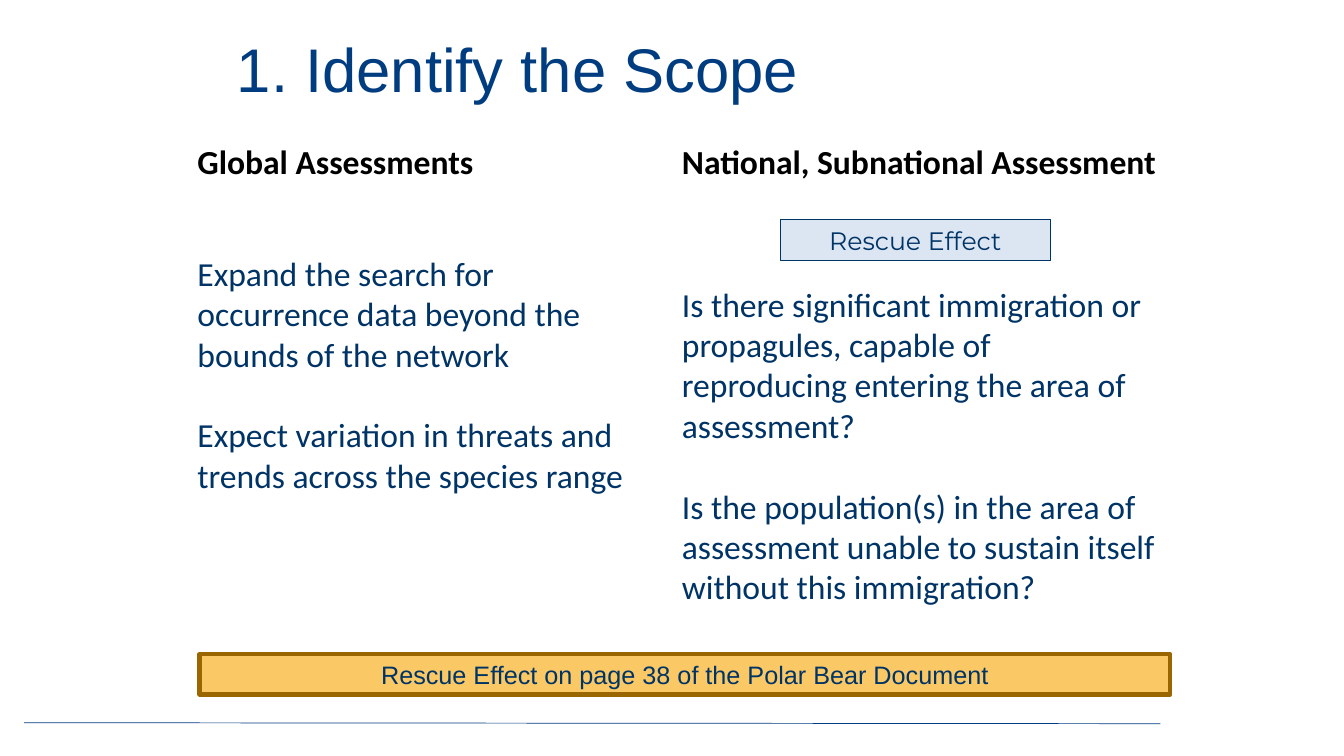
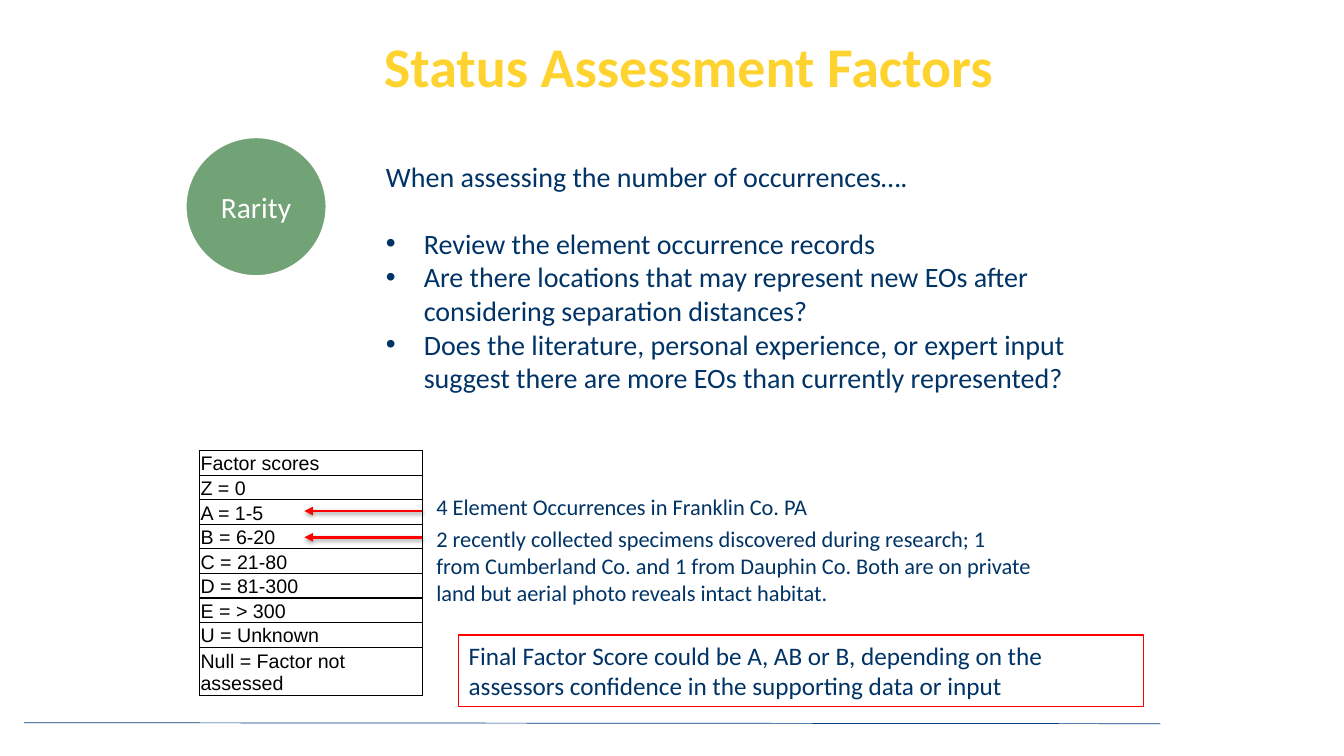
import lxml.etree
import pptx
import pptx.dml.color
import pptx.enum.shapes
import pptx.enum.text
import pptx.oxml.ns
import pptx.util

ALIGN = pptx.enum.text.PP_ALIGN
ANCHOR = pptx.enum.text.MSO_ANCHOR
SHAPE = pptx.enum.shapes.MSO_SHAPE

BLACK = "000000"
WHITE = "FFFFFF"
NAVY = "003366"
BLUE = "003D80"
RED = "FF0000"
YELLOW = "FFD32F"
GREEN = "72A376"
PALE_BLUE = "DCE6F2"
ORANGE = "FAC864"
BROWN = "996600"


def rgb(color):
    return pptx.dml.color.RGBColor.from_string(color)


def add_element(parent, tag, **attributes):
    element = lxml.etree.SubElement(parent, pptx.oxml.ns.qn(tag))
    for name, value in attributes.items():
        element.set(name, str(value))
    return element


def add_color(parent, color):
    return add_element(parent, "a:srgbClr", val=color)


def write(frame, text, font="Calibri", size=18, color=NAVY, bold=False,
          align=ALIGN.LEFT, before=0, bullet=False):
    para = frame.paragraphs[0]
    if para.runs:
        para = frame.add_paragraph()
    para.alignment = align
    para.space_before = pptx.util.Pt(before)
    if bullet:
        properties = para._p.get_or_add_pPr()
        indent = pptx.util.Pt(27)
        properties.set("marL", str(indent))
        properties.set("indent", str(-indent))
        add_element(properties, "a:buFont", typeface="Arial")
        add_element(properties, "a:buChar", char="•")
    span = para.add_run()
    span.text = text
    span.font.name = font
    span.font.size = pptx.util.Pt(size)
    span.font.bold = bold
    span.font.color.rgb = rgb(color)


class Deck:
    def __init__(self):
        self.file = pptx.Presentation()
        self.file.slide_width = pptx.util.Inches(13.33)
        self.file.slide_height = pptx.util.Inches(7.5)
        self.page = None

    def across(self, percent):
        return round(self.file.slide_width * percent / 100)

    def down(self, percent):
        return round(self.file.slide_height * percent / 100)

    def area(self, left, top, width, height):
        return (self.across(left), self.down(top),
                self.across(width), self.down(height))

    def new_page(self, title, left, top, **style):
        self.page = self.file.slides.add_slide(self.file.slide_layouts[5])
        box = self.page.shapes.title
        box.left, box.top, box.width, box.height = self.area(left, top, 67.5, 10.4)
        frame = box.text_frame
        frame.auto_size = pptx.enum.text.MSO_AUTO_SIZE.NONE
        frame.vertical_anchor = ANCHOR.MIDDLE
        write(frame, title, **style)
        self.line((86.33, 95.73), (1.8, 95.6), BLUE, 0.5)

    def line(self, start, end, color, width, arrow=False):
        connector = self.page.shapes.add_connector(
            pptx.enum.shapes.MSO_CONNECTOR.STRAIGHT,
            self.across(start[0]), self.down(start[1]),
            self.across(end[0]), self.down(end[1]))
        connector.line.color.rgb = rgb(color)
        connector.line.width = pptx.util.Pt(width)
        properties = connector.element.spPr
        effects = add_element(properties, "a:effectLst")
        if arrow:
            outline = properties.find(pptx.oxml.ns.qn("a:ln"))
            add_element(outline, "a:tailEnd", type="triangle")
            shadow = add_element(effects, "a:outerShdw",
                                 blurRad=pptx.util.Pt(3.1), dist=pptx.util.Pt(1.6),
                                 dir=90 * 60000, rotWithShape=0)
            add_element(add_color(shadow, BLACK), "a:alpha", val=38000)

    def text(self, area, *paragraphs, **style):
        box = self.page.shapes.add_textbox(*self.area(*area))
        box.text_frame.word_wrap = True
        for text, changes in paragraphs:
            write(box.text_frame, text, **{**style, **changes})

    def shape(self, kind, area, text, fill=None, outline=BLACK, width=0.75, **style):
        box = self.page.shapes.add_shape(kind, *self.area(*area))
        box.shadow.inherit = False
        if fill:
            box.fill.solid()
            box.fill.fore_color.rgb = rgb(fill)
        else:
            box.fill.background()
        box.line.color.rgb = rgb(outline)
        box.line.width = pptx.util.Pt(width)
        box.text_frame.word_wrap = True
        box.text_frame.vertical_anchor = ANCHOR.MIDDLE
        write(box.text_frame, text, **style)

    def table(self, left, top, width, rows):
        height = sum(size for text, size in rows)
        table = self.page.shapes.add_table(
            len(rows), 1, *self.area(left, top, width, height)).table
        table.first_row = False
        table.horz_banding = False
        for index, (text, size) in enumerate(rows):
            table.rows[index].height = self.down(size)
            cell = table.cell(index, 0)
            cell.margin_left = cell.margin_right = cell.margin_top = pptx.util.Inches(0.01)
            cell.margin_bottom = 0
            cell.vertical_anchor = ANCHOR.BOTTOM
            properties = cell._tc.get_or_add_tcPr()
            for side in ("a:lnL", "a:lnR", "a:lnT", "a:lnB"):
                border = add_element(properties, side, w=pptx.util.Pt(1))
                add_color(add_element(border, "a:solidFill"), BLACK)
            cell.fill.background()
            write(cell.text_frame, text, font="Arial", size=14, color=BLACK)

    def save(self):
        self.file.save("out.pptx")


def add_scope(deck):
    deck.new_page("1. Identify the Scope", 16.88, 3.73, font="Arial", size=44, color=BLUE)
    heading = {"color": BLACK, "bold": True}
    deck.text(
        (13.95, 18, 34.43, 60.53),
        ("Global Assessments", heading),
        ("Expand the search for occurrence data beyond the bounds of the network",
         {"before": 51}),
        ("Expect variation in threats and trends across the species range",
         {"before": 29}),
        size=24)
    deck.text(
        (50, 18, 37.05, 68.67),
        ("National, Subnational Assessment", heading),
        ("Is there significant immigration or propagules, capable of reproducing "
         "entering the area of assessment?", {"before": 73}),
        ("Is the population(s) in the area of assessment unable to sustain itself "
         "without this immigration?", {"before": 29}),
        size=24)
    deck.shape(SHAPE.RECTANGLE, (58.05, 29.07, 20.1, 5.33), "Rescue Effect",
               fill=PALE_BLUE, outline=NAVY, font="Montserrat", align=ALIGN.CENTER)
    deck.shape(SHAPE.RECTANGLE, (14.85, 86.53, 72.23, 5.33),
               "Rescue Effect on page 38 of the Polar Bear Document",
               fill=ORANGE, outline=BROWN, width=3, font="Arial", align=ALIGN.CENTER)


def add_factors(deck):
    deck.new_page("Status Assessment Factors", 17.48, 3.47, size=40, color=YELLOW,
                  bold=True, align=ALIGN.CENTER)
    deck.shape(SHAPE.OVAL, (13.73, 18, 10.65, 18.67), "Rarity", fill=GREEN,
               outline=WHITE, width=3, size=21, color=WHITE, align=ALIGN.CENTER)
    deck.text(
        (27.98, 20.4, 54.9, 32.8),
        ("When assessing the number of occurrences….", {}),
        ("Review the element occurrence records", {"bullet": True, "before": 24}),
        ("Are there locations that may represent new EOs after considering "
         "separation distances?", {"bullet": True}),
        ("Does the literature, personal experience, or expert input suggest there "
         "are more EOs than currently represented?", {"bullet": True}),
        size=20)
    scores = ["Factor scores", "Z = 0", "A = 1-5", "B = 6-20", "C = 21-80",
              "D = 81-300", "E = > 300", "U = Unknown"]
    rows = [(score, 3.07) for score in scores]
    deck.table(14.85, 59.6, 16.58, rows + [("Null = Factor not assessed", 6)])
    for height in (67.6, 71.07):
        deck.line((31.43, height), (22.65, height), RED, 2, arrow=True)
    deck.text((31.73, 64.53, 38.48, 4.93),
              ("4 Element Occurrences in Franklin Co. PA", {}), size=16)
    deck.text(
        (31.73, 68.8, 45.98, 12.13),
        ("2 recently collected specimens discovered during research; 1 from "
         "Cumberland Co. and 1 from Dauphin Co. Both are on private land but "
         "aerial photo reveals intact habitat.", {}),
        size=16)
    deck.shape(SHAPE.RECTANGLE, (34.13, 84, 50.93, 9.47),
               "Final Factor Score could be A, AB or B, depending on the assessors "
               "confidence in the supporting data or input", outline=RED)


def main():
    deck = Deck()
    add_scope(deck)
    add_factors(deck)
    deck.save()


if __name__ == "__main__":
    main()
